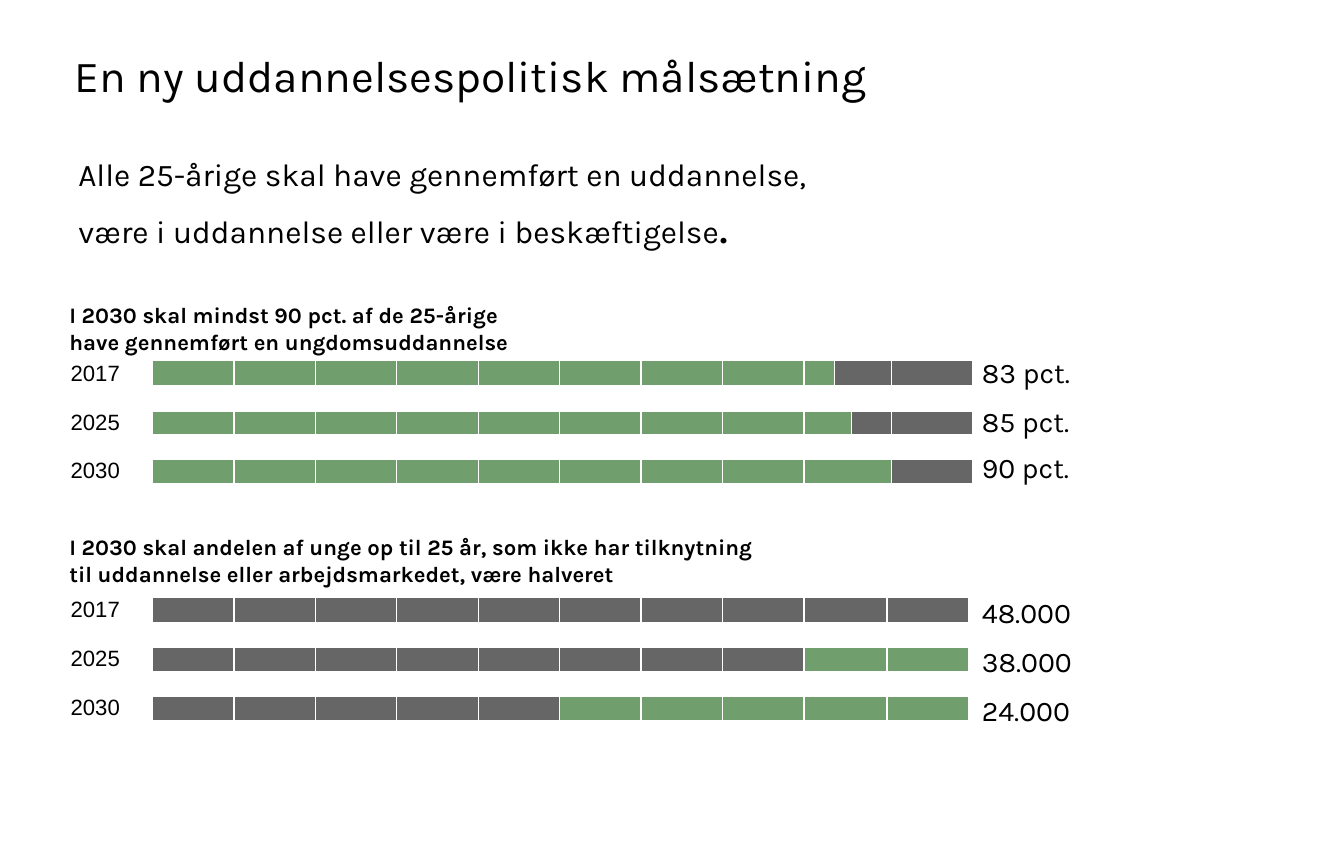
from copy import deepcopy
from dataclasses import dataclass

from lxml import etree
from pptx import Presentation
from pptx.dml.color import RGBColor
from pptx.enum import text as t
from pptx.oxml import ns
from pptx.util import Inches, Pt

BLACK, WHITE, GREEN, GREY = "000000", "FFFFFF", "709E6C", "666666"
LABEL_WIDTH = 0.72
SEGMENT = 0.716  # a tenth of a full bar
FIRST_GAP_HEIGHT, GAP_HEIGHT, BAR_HEIGHT = 0.2, 0.22, 0.21
VALUE_LEFT = 8.63


@dataclass
class Bar:
    year: str
    value: str
    value_top: float
    spans: tuple[int, ...]  # grid columns taken by each segment
    lead: int  # segments in the first colour


@dataclass
class Goal:
    heading: str
    heading_top: float
    table_top: float
    widths: list[float]
    colors: tuple[str, str]
    bars: list[Bar]


TENTHS = (1,) * 10
GOALS = [
    Goal("I 2030 skal mindst 90 pct. af de 25-årige\vhave gennemført en ungdomsuddannelse",
         2.65, 2.96, [SEGMENT] * 8 + [0.27, 0.15, 0.35, SEGMENT], (GREEN, GREY),
         [Bar("2017", "83 pct.", 3.12, (1,) * 9 + (2, 1), 9),
          Bar("2025", "85 pct.", 3.55, (1,) * 8 + (2, 1, 1), 9),
          Bar("2030", "90 pct.", 3.96, (1,) * 8 + (3, 1), 9)]),
    Goal("I 2030 skal andelen af unge op til 25 år, som ikke har tilknytning\v"
         "til uddannelse eller arbejdsmarkedet, være halveret",
         4.69, 5.04, [SEGMENT] * 8 + [0.73, 0.72], (GREY, GREEN),
         [Bar("2017", "48.000", 5.23, TENTHS, 10),
          Bar("2025", "38.000", 5.66, TENTHS, 8),
          Bar("2030", "24.000", 6.09, TENTHS, 5)]),
]


def rgb(color: str) -> RGBColor:
    return RGBColor.from_string(color)


def format_run(run, size: float, font: str = "Karla", bold: bool = False) -> None:
    run.font.size = Pt(size)
    run.font.name = font
    run.font.bold = bold
    run.font.color.rgb = rgb(BLACK)


def add_text(slide, wording: str, left: float, top: float, width: float, height: float,
             size: float, bold: bool = False, inset: bool = False):
    """Add a text box; inset keeps the default margins. Return its text frame."""
    frame = slide.shapes.add_textbox(
        Inches(left), Inches(top), Inches(width), Inches(height)).text_frame
    frame.word_wrap = True
    if not inset:
        frame.margin_left = frame.margin_top = 0
    frame.text = wording
    paragraph = frame.paragraphs[0]
    for run in paragraph.runs:
        format_run(run, size, bold=bold)
    # Line breaks take the size of the text around them.
    for line_break in paragraph._p.findall(ns.qn("a:br")):
        line_break.append(deepcopy(paragraph.runs[0]._r.rPr))
    return frame


def style_cell(cell, bottom_width: float) -> None:
    """Give a cell no margins, no fill, white borders and a small empty line."""
    cell.margin_left = cell.margin_right = cell.margin_top = cell.margin_bottom = 0
    cell.vertical_anchor = t.MSO_ANCHOR.BOTTOM
    cell.fill.background()
    cell.text_frame.paragraphs[0]._p.get_or_add_endParaRPr().set("sz", "600")
    properties = cell._tc.get_or_add_tcPr()
    for position, side in enumerate("LRTB"):
        width = bottom_width if side == "B" else 1
        line = etree.Element(ns.qn(f"a:ln{side}"), w=str(int(Pt(width))))
        solid = etree.SubElement(line, ns.qn("a:solidFill"))
        etree.SubElement(solid, ns.qn("a:srgbClr"), val=WHITE)
        properties.insert(position, line)


def fill_bar(table, gap_row: int, bar: Bar, colors: tuple[str, str]) -> None:
    """Fill the gap row and the bar row that belong to one year."""
    bar_row = gap_row + 1
    year = table.cell(gap_row, 0)
    year.merge(table.cell(bar_row, 0))
    year.text_frame.text = bar.year
    format_run(year.text_frame.paragraphs[0].runs[0], 14, "Arial")
    table.cell(gap_row, 1).merge(table.cell(gap_row, len(table.columns) - 1))
    column = 1
    for index, span in enumerate(bar.spans):
        segment = table.cell(bar_row, column)
        if span > 1:
            segment.merge(table.cell(bar_row, column + span - 1))
        segment.fill.solid()
        segment.fill.fore_color.rgb = rgb(colors[index >= bar.lead])
        column += span


def add_goal(slide, goal: Goal) -> None:
    widths = [LABEL_WIDTH] + goal.widths
    heights = [GAP_HEIGHT, BAR_HEIGHT] * len(goal.bars)
    heights[0] = FIRST_GAP_HEIGHT
    table = slide.shapes.add_table(
        len(heights), len(widths), Inches(0.62), Inches(goal.table_top),
        Inches(sum(widths)), Inches(sum(heights))).table
    table.first_row = table.horz_banding = False
    for column, width in zip(table.columns, widths):
        column.width = Inches(width)
    for index, (row, height) in enumerate(zip(table.rows, heights)):
        row.height = Inches(height)
        for cell in row.cells:
            style_cell(cell, 1 if index else 3)
    for index, bar in enumerate(goal.bars):
        fill_bar(table, 2 * index, bar, goal.colors)
        add_text(slide, bar.value, VALUE_LEFT, bar.value_top, 1.24, 0.31, 18)
    add_text(slide, goal.heading, 0.61, goal.heading_top, 9.02, 0.46, 14, bold=True)


def main() -> None:
    deck = Presentation()
    deck.slide_width = Inches(11.812)
    deck.slide_height = Inches(7.5)
    slide = deck.slides.add_slide(deck.slide_layouts[6])

    title = add_text(slide, "En ny uddannelsespolitisk målsætning",
                     0.56, 0, 8.67, 1.32, 28, inset=True)
    title.vertical_anchor = t.MSO_ANCHOR.MIDDLE
    ambition = add_text(slide, "Alle 25-årige skal have gennemført en uddannelse,\v"
                        "være i uddannelse eller være i beskæftigelse",
                        0.59, 1.31, 8.2, 0.85, 20, inset=True)
    full_stop = ambition.paragraphs[0].add_run()
    full_stop.text = "."
    format_run(full_stop, 32)

    for goal in GOALS:
        add_goal(slide, goal)
    deck.save("out.pptx")


if __name__ == "__main__":
    main()
